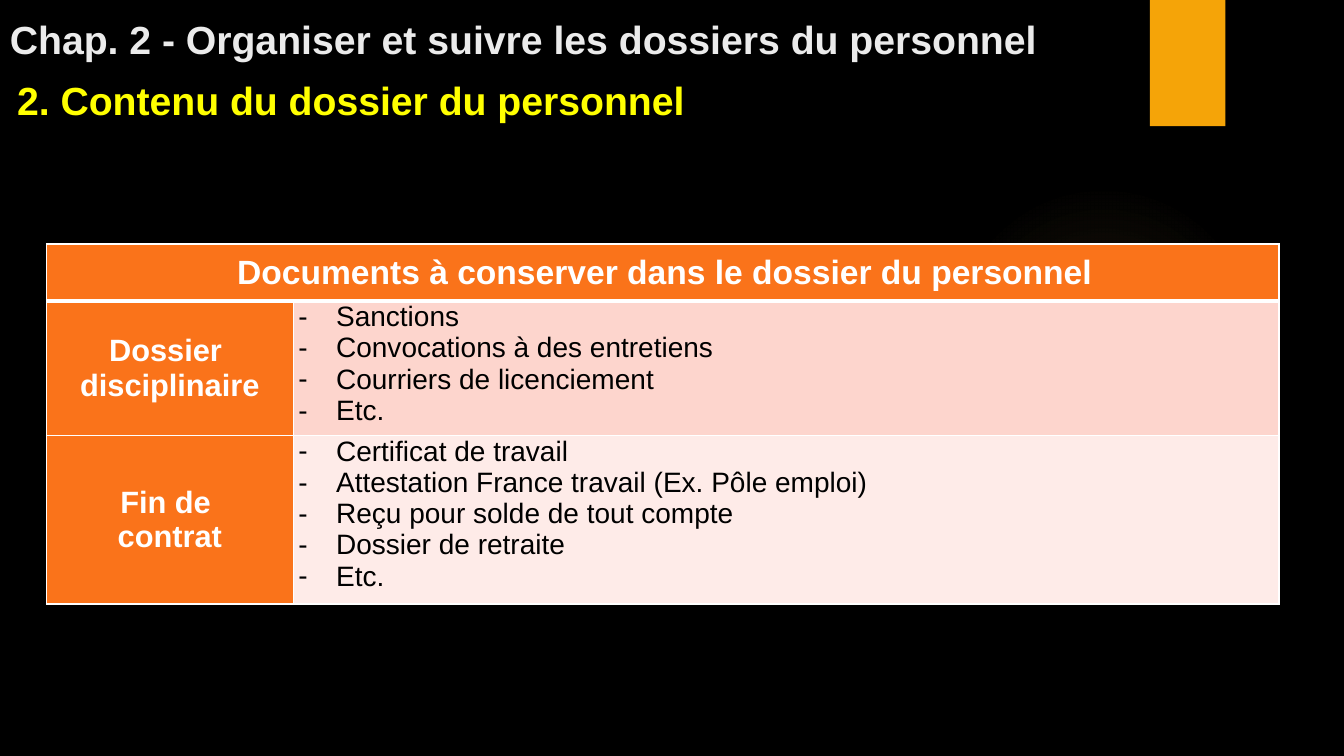
from lxml import etree
from pptx import Presentation
from pptx.dml.color import RGBColor
from pptx.enum.shapes import MSO_SHAPE
from pptx.enum.text import MSO_ANCHOR, PP_ALIGN
from pptx.oxml import parse_xml
from pptx.oxml.ns import qn
from pptx.util import Cm, Pt

OVAL, RECTANGLE = MSO_SHAPE.OVAL, MSO_SHAPE.RECTANGLE
TOP, MIDDLE, BOTTOM = MSO_ANCHOR.TOP, MSO_ANCHOR.MIDDLE, MSO_ANCHOR.BOTTOM
CENTER, JUSTIFY, LEFT = PP_ALIGN.CENTER, PP_ALIGN.JUSTIFY, PP_ALIGN.LEFT

NAMESPACE = 'xmlns:a="http://schemas.openxmlformats.org/drawingml/2006/main"'
FONT = "Arial"
WHITE, BLACK, ORANGE, AMBER, GLOW = "FFFFFF", "000000", "FA731A", "F5A408", "FAC96A"

TABLE_TITLE = "Documents à conserver dans le dossier du personnel"
COLUMN_WIDTHS = (6.22, 24.84)
HEADER_HEIGHT = 1.44
SECTIONS = [
    (("Dossier ", "disciplinaire"),
     ("Sanctions", "Convocations à des entretiens",
      "Courriers de licenciement", "Etc."),
     "FDD5CD", 3.39),
    (("Fin de ", "contrat"),
     ("Certificat de travail", "Attestation France travail (Ex. Pôle emploi)",
      "Reçu pour solde de tout compte", "Dossier de retraite", "Etc."),
     "FEEBE8", 4.24),
]


def color(value):
    return RGBColor.from_string(value)


def add_dash(para):
    """Give the paragraph a hanging dash as bullet."""
    properties = para._p.get_or_add_pPr()
    properties.set("marL", str(Cm(0.95)))
    properties.set("indent", str(-Cm(0.95)))
    etree.SubElement(properties, qn("a:buFont")).set("typeface", FONT)
    etree.SubElement(properties, qn("a:buChar")).set("char", "-")


def write_lines(frame, lines, size, tint, bold=True, align=LEFT, dashed=False):
    for index, line in enumerate(lines):
        para = frame.paragraphs[0] if index == 0 else frame.add_paragraph()
        para.text = line
        para.alignment = align
        if dashed:
            add_dash(para)
        para.font.name = FONT
        para.font.size = Pt(size)
        para.font.bold = bold
        para.font.color.rgb = color(tint)


def add_heading(page, box, text, tint, anchor):
    frame = page.shapes.add_textbox(*map(Cm, box)).text_frame
    frame.word_wrap = True
    frame.vertical_anchor = anchor
    write_lines(frame, [text], 28, tint)


def add_plain_shape(page, kind, box):
    shape = page.shapes.add_shape(kind, *map(Cm, box))
    shape.shadow.inherit = False
    shape.line.fill.background()
    return shape


def add_decor(page, glow_box, tab_box):
    """Place the faint round glow and the amber tab."""
    glow = add_plain_shape(page, OVAL, glow_box)
    stops = "".join(
        f'<a:gs pos="{position}000"><a:srgbClr val="{GLOW}">'
        f'<a:alpha val="{opacity}000"/></a:srgbClr></a:gs>'
        for position, opacity in ((0, 7), (36, 6), (69, 0)))
    gradient = parse_xml(
        f'<a:gradFill {NAMESPACE}><a:gsLst>{stops}</a:gsLst><a:path path="circle">'
        '<a:fillToRect l="50000" t="50000" r="50000" b="50000"/></a:path></a:gradFill>')
    glow._element.spPr.find(qn("a:prstGeom")).addnext(gradient)
    tab = add_plain_shape(page, RECTANGLE, tab_box)
    tab.fill.solid()
    tab.fill.fore_color.rgb = color(AMBER)


def style_cell(cell, fill, anchor, top=1, bottom=1):
    """Set margins, white borders (widths in points) and fill."""
    cell.margin_left = cell.margin_right = Cm(0.13)
    cell.margin_top = cell.margin_bottom = 0
    cell.vertical_anchor = anchor
    properties = cell._tc.get_or_add_tcPr()
    for side, width in (("L", 1), ("R", 1), ("T", top), ("B", bottom)):
        properties.append(parse_xml(
            f'<a:ln{side} {NAMESPACE} w="{Pt(width)}"><a:solidFill>'
            f'<a:srgbClr val="{WHITE}"/></a:solidFill></a:ln{side}>'))
    cell.fill.solid()
    cell.fill.fore_color.rgb = color(fill)


def add_documents_table(page, left, top):
    heights = [HEADER_HEIGHT] + [section[-1] for section in SECTIONS]
    table = page.shapes.add_table(
        len(heights), len(COLUMN_WIDTHS), Cm(left), Cm(top),
        Cm(sum(COLUMN_WIDTHS)), Cm(sum(heights))).table
    for column, width in zip(table.columns, COLUMN_WIDTHS):
        column.width = Cm(width)
    for row, height in zip(table.rows, heights):
        row.height = Cm(height)

    header = table.cell(0, 0)
    header.merge(table.cell(0, 1))
    for cell in table.rows[0].cells:
        style_cell(cell, ORANGE, MIDDLE, bottom=3)
    write_lines(header.text_frame, [TABLE_TITLE], 24, WHITE, align=CENTER)
    header.text_frame.paragraphs[0]._p.get_or_add_pPr().set("marL", str(Cm(0.1)))

    for row, (label, documents, tint, _) in enumerate(SECTIONS, start=1):
        name, content = table.cell(row, 0), table.cell(row, 1)
        border = 3 if row == 1 else 1
        style_cell(name, ORANGE, MIDDLE, top=border)
        style_cell(content, tint, TOP, top=border)
        write_lines(name.text_frame, label, 22, WHITE, align=CENTER)
        write_lines(content.text_frame, documents, 20, BLACK, bold=False,
                    align=JUSTIFY, dashed=True)


def main():
    deck = Presentation()
    deck.slide_width, deck.slide_height = Cm(33.87), Cm(19.05)
    page = deck.slides.add_slide(deck.slide_layouts[6])
    page.background.fill.solid()
    page.background.fill.fore_color.rgb = color(BLACK)
    add_decor(page, (23.9, 4.65, 7.82, 7.82), (28.98, 0, 1.9, 3.18))
    add_heading(page, (0.18, 1.8, 30.63, 1.45),
                "2. Contenu du dossier du personnel", "FFFF00", TOP)
    add_documents_table(page, 1.17, 6.15)
    add_heading(page, (0, -0.1, 32.49, 1.8),
                "Chap. 2 - Organiser et suivre les dossiers du personnel",
                "EBEBEB", BOTTOM)
    deck.save("out.pptx")


if __name__ == "__main__":
    main()
